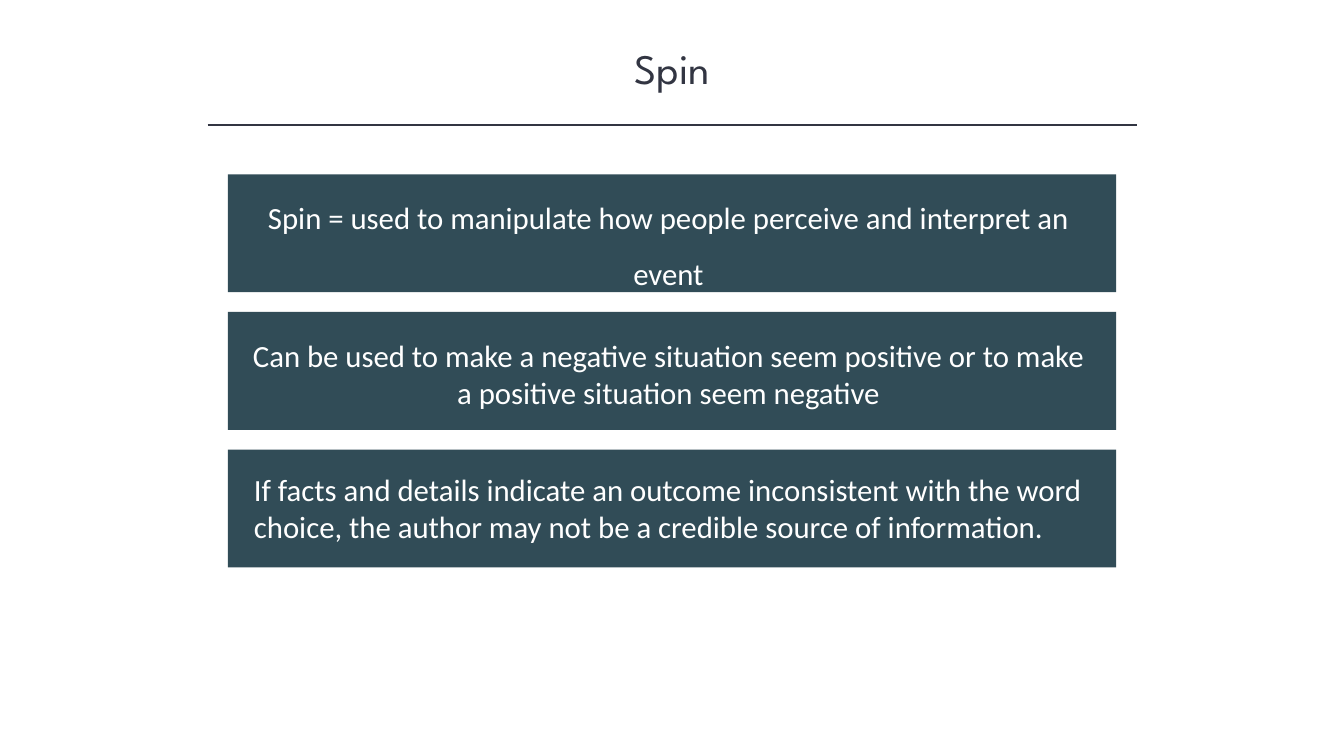
from lxml.etree import SubElement
from pptx import Presentation
from pptx.dml.color import RGBColor
from pptx.enum.shapes import MSO_CONNECTOR as LINE, MSO_SHAPE as SHAPE
from pptx.enum.text import MSO_ANCHOR as ANCHOR, MSO_AUTO_SIZE as FIT, PP_ALIGN as ALIGN
from pptx.oxml.ns import qn
from pptx.util import Inches, Pt


def color(value):
    return RGBColor.from_string(value)


class SpinSlide:
    INK, PANEL, WHITE = "323542", "314C57", "FFFFFF"
    TITLE_FONT = {"name": "League Spartan", "size": Pt(30)}
    BODY_FONT = {"name": "Calibri", "size": Pt(22)}

    def __init__(self, prs):
        self.s = prs.slides.add_slide(prs.slide_layouts[6])

    def add_text(self, sp, text, font, ink, **paragraph):
        tf = sp.text_frame
        frame = {"word_wrap": True, "auto_size": FIT.SHAPE_TO_FIT_TEXT,
                 "vertical_anchor": ANCHOR.TOP}
        p = tf.paragraphs[0]
        r = p.add_run()
        r.text = text
        for target, values in ((tf, frame), (p, paragraph), (r.font, font)):
            for name, value in values.items():
                setattr(target, name, value)
        r.font.color.rgb = color(ink)

    def title(self, text, *box):
        sp = self.s.shapes.add_textbox(*map(Inches, box))
        self.add_text(sp, text, self.TITLE_FONT, self.INK, alignment=ALIGN.CENTER)

    def rule(self, x1, x2, y):
        sp = self.s.shapes.add_connector(LINE.STRAIGHT, *map(Inches, (x1, y, x2, y)))
        sp.line.color.rgb = color(self.INK)
        sp.line.width = Pt(1)
        SubElement(sp._element.spPr, qn("a:effectLst"))

    def rect(self, shapes, *box):
        sp = shapes.add_shape(SHAPE.RECTANGLE, *map(Inches, box))
        sp.shadow.inherit = False
        sp.fill.solid()
        sp.fill.fore_color.rgb = color(self.PANEL)
        sp.line.fill.background()
        return sp

    def card(self, top, text, label_box, **paragraph):
        shapes = self.s.shapes.add_group_shape().shapes
        self.rect(shapes, 2.26, top, 8.81, 1.17)
        label = self.rect(shapes, *label_box)
        self.add_text(label, text, self.BODY_FONT, self.WHITE, **paragraph)


def main():
    prs = Presentation()
    prs.slide_width, prs.slide_height = Inches(13.33), Inches(7.5)
    slide = SpinSlide(prs)

    # Heading
    slide.title("Spin", 1.67, 0.37, 10, 0.61)
    slide.rule(2.06, 11.28, 1.24)

    # Cards: text, label box, paragraph format
    cards = [
        ("Spin = used to manipulate how people perceive and interpret an event",
         (2.36, 1.74, 8.54, 1.15), {"alignment": ALIGN.CENTER, "line_spacing": 1.5}),
        ("Can be used to make a negative situation seem positive or to make "
         "a positive situation seem negative",
         (2.36, 3.29, 8.54, 0.84), {"alignment": ALIGN.CENTER}),
        ("If facts and details indicate an outcome inconsistent with the word "
         "choice, the author may not be a credible source of information.",
         (2.42, 4.62, 8.54, 0.84), {"alignment": ALIGN.LEFT}),
    ]
    pitch = (4.46 - 1.73) / 2
    for i, (text, label_box, paragraph) in enumerate(cards):
        slide.card(1.73 + i * pitch, text, label_box, **paragraph)

    prs.save("out.pptx")


if __name__ == "__main__":
    main()
